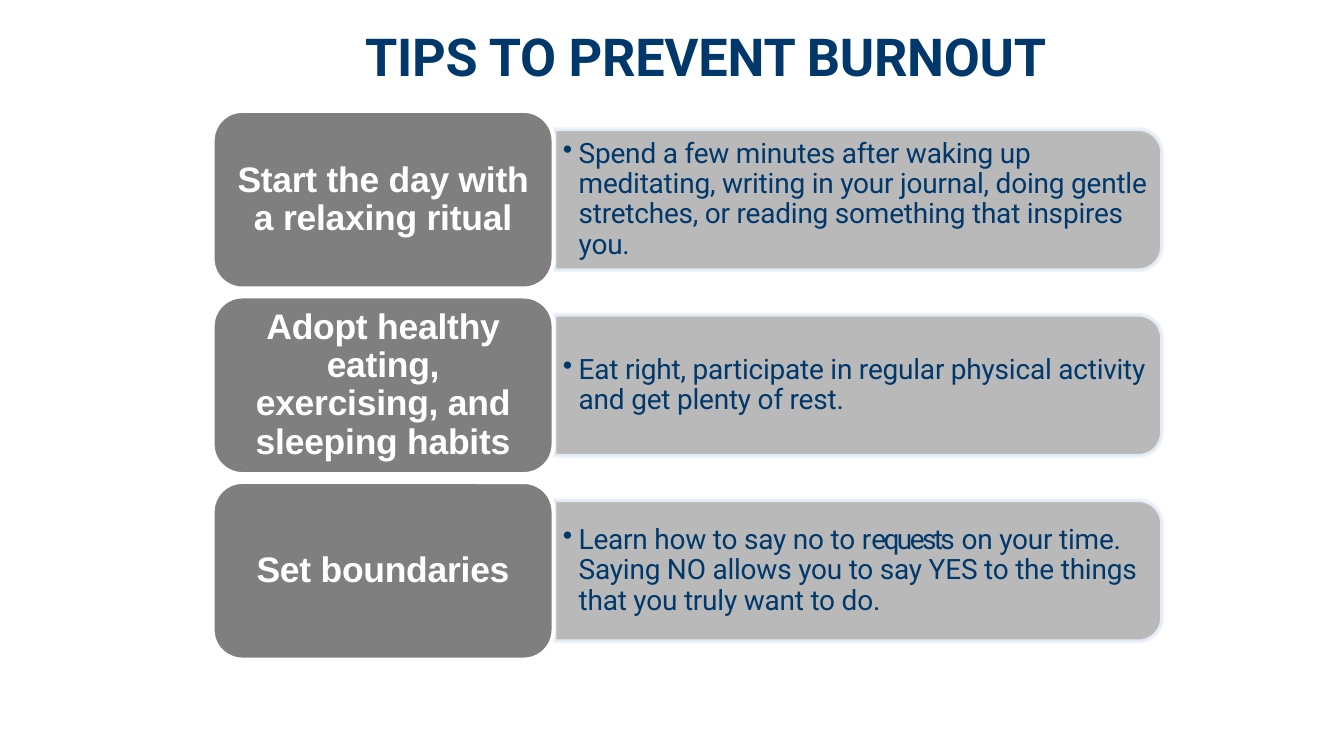
"""Build a slide with three tips to prevent burnout."""
from lxml.etree import SubElement
from pptx import Presentation
from pptx.dml.color import RGBColor
from pptx.enum.shapes import MSO_SHAPE
from pptx.enum.text import MSO_ANCHOR, PP_ALIGN
from pptx.oxml.ns import qn
from pptx.util import Pt

NAVY, WHITE = "00386B", "FFFFFF"
LABEL_GRAY, PANEL_GRAY, PANEL_EDGE = "7F7F7F", "B2B2B2", "EAF1F9"


def color(hex_string):
    return RGBColor.from_string(hex_string)


def write_text(shape, text, *, size, font="Roboto", fill=NAVY, bold=False, bullet=False,
               inset=(0, 0), line_spacing=0.9, tight=""):
    frame = shape.text_frame
    frame.word_wrap = True
    frame.vertical_anchor = MSO_ANCHOR.MIDDLE
    frame.margin_left = frame.margin_right = Pt(inset[0])
    frame.margin_top = frame.margin_bottom = Pt(inset[1])
    paragraph = frame.paragraphs[0]
    paragraph.alignment = PP_ALIGN.LEFT if bullet else PP_ALIGN.CENTER
    paragraph.line_spacing = line_spacing
    if bullet:
        properties = paragraph._p.get_or_add_pPr()
        properties.set("marL", str(Pt(8.5)))
        properties.set("indent", str(-Pt(8.5)))
        SubElement(properties, qn("a:buChar")).set("char", "•")
    before, match, after = text.partition(tight) if tight else (text, "", "")
    for part, spacing in ((before, -10), (match, -140), (after, -10)):
        if part:
            run = paragraph.add_run()
            run.text = part
            run.font.name, run.font.size, run.font.bold = font, Pt(size), bold
            run.font.color.rgb = color(fill)
            run._r.get_or_add_rPr().set("spc", str(spacing))


tips = [
    ("Start the day with a relaxing ritual",
     "Spend a few minutes after waking up meditating, writing in your journal, doing "
     "gentle stretches, or reading something that inspires you.", ""),
    ("Adopt healthy eating, exercising, and sleeping habits",
     "Eat right, participate in regular physical activity and get plenty of rest.", ""),
    ("Set boundaries",
     "Learn how to say no to requests on your time. Saying NO allows you to say YES "
     "to the things that you truly want to do.", "equests"),
]

presentation = Presentation()
presentation.slide_width, presentation.slide_height = Pt(720), Pt(405)
slide = presentation.slides.add_slide(presentation.slide_layouts[6])
shapes = slide.shapes

title = shapes.add_textbox(Pt(119), Pt(12.5), Pt(518), Pt(34.5))
write_text(title, "TIPS TO PREVENT BURNOUT", size=28, bold=True, line_spacing=1)

label_left, label_width, label_height = 114, 182.5, 95
panel_left, panel_width, panel_height = 297, 325.5, 75.6
first_middle, pitch = 107, 99.4

for index, (heading, advice, tight) in enumerate(tips):
    middle = first_middle + index * pitch

    panel = shapes.add_shape(
        MSO_SHAPE.ROUND_2_SAME_RECTANGLE,
        Pt(panel_left + (panel_width - panel_height) / 2), Pt(middle - panel_width / 2),
        Pt(panel_height), Pt(panel_width))
    panel.rotation = 90
    label = shapes.add_shape(
        MSO_SHAPE.ROUNDED_RECTANGLE, Pt(label_left), Pt(middle - label_height / 2),
        Pt(label_width), Pt(label_height))
    for shape, fill, edge in ((panel, PANEL_GRAY, PANEL_EDGE), (label, LABEL_GRAY, WHITE)):
        shape.shadow.inherit = False
        shape.fill.solid()
        shape.fill.fore_color.rgb = color(fill)
        shape.line.color.rgb = color(edge)
        shape.line.width = Pt(2)
    for parent in (panel.fill._xPr, panel.line._ln):
        SubElement(parent.find(qn("a:solidFill"))[0], qn("a:alpha")).set("val", "90000")

    write_text(label, heading, size=19, font="Arial", fill=WHITE, bold=True, inset=(5.5, 2.5))
    advice_box = shapes.add_textbox(
        Pt(panel_left), Pt(middle - 34), Pt(322), Pt(68))
    write_text(advice_box, advice, size=15, bullet=True, inset=(4.5, 2), tight=tight)

presentation.save("out.pptx")
